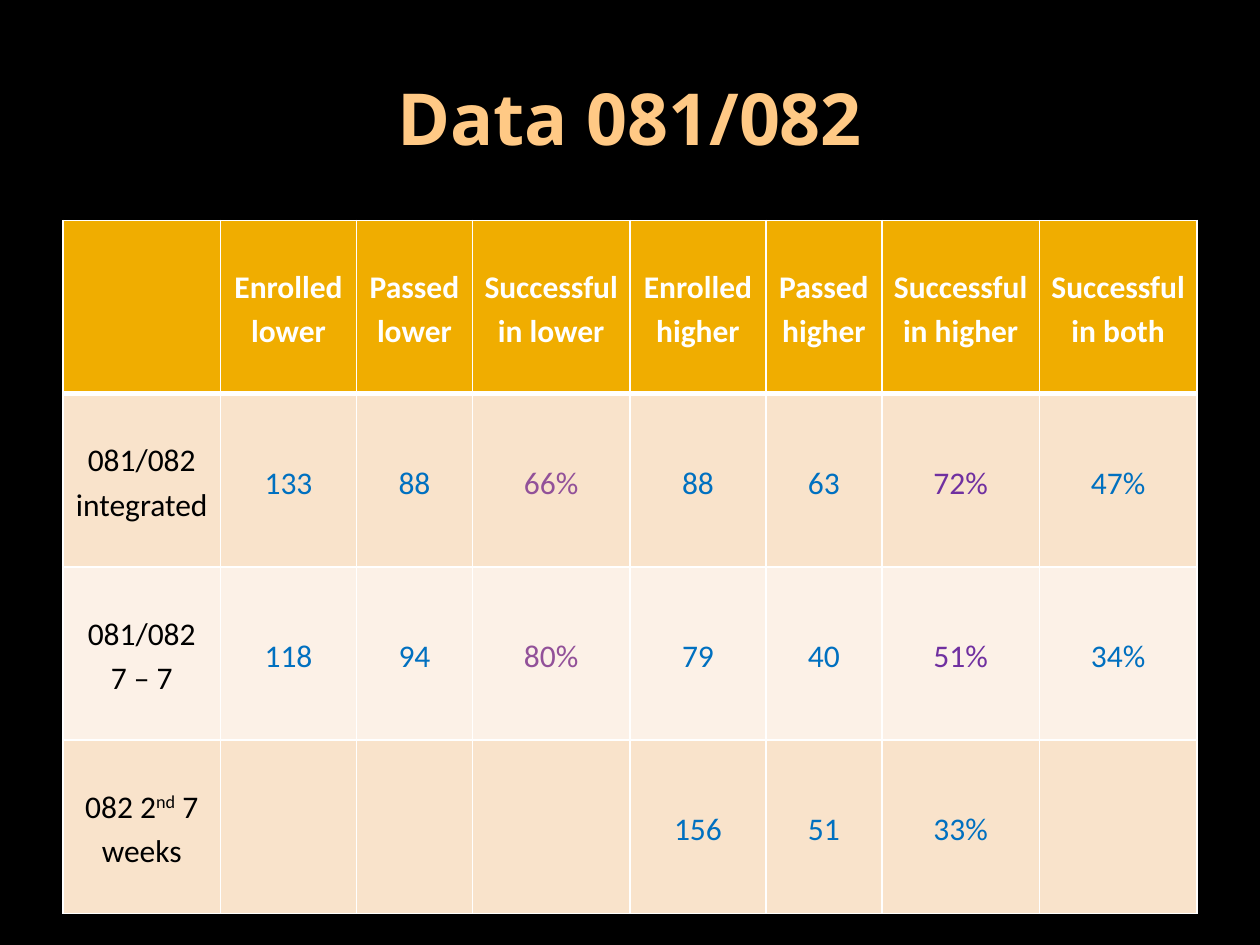
"""Build the Data 081/082 slide with its enrolment and success table."""
from lxml.etree import SubElement
from pptx import Presentation
from pptx.dml.color import RGBColor
from pptx.enum.text import MSO_ANCHOR, PP_ALIGN
from pptx.oxml.ns import qn
from pptx.util import Inches, Pt

TITLE = "Data 081/082"
HEADINGS = ["", "Enrolled lower", "Passed lower", "Successful in lower", "Enrolled higher",
            "Passed higher", "Successful in higher", "Successful in both"]
ROWS = [
    (["081/082 integrated"], ["133", "88", "66%", "88", "63", "72%", "47%"]),
    (["081/082", "\n", "7 – 7"], ["118", "94", "80%", "79", "40", "51%", "34%"]),
    (["082 2", "^nd", " 7 weeks"], ["", "", "", "156", "51", "33%", ""]),
]
COLUMN_WIDTHS = [1.25, 1.08, 0.92, 1.25, 1.08, 0.92, 1.25, 1.25]
ROW_HEIGHT = 1.375
COLORS = {
    "background": "000000", "title": "FFC985", "header": "F0AD00", "border": "FFFFFF",
    "odd": "F9E3CB", "even": "FCF1E7", "heading": "FFFFFF", "label": "000000",
    "value": "0070C0", "lower": "925199", "higher": "7030A0",
}
PERCENT_COLORS = {3: "lower", 6: "higher"}


def color(name):
    return RGBColor.from_string(COLORS[name])


def write(paragraph, pieces, font, size, tint, bold):
    paragraph.alignment = PP_ALIGN.CENTER
    for piece in pieces:
        if piece == "\n":
            paragraph.add_line_break()
            continue
        span = paragraph.add_run()
        span.text = piece.lstrip("^")
        span.font.name = font
        span.font.size = Pt(size)
        span.font.bold = bold
        span.font.color.rgb = color(tint)
        if piece.startswith("^"):
            span.font._element.set("baseline", "30000")


def add_borders(cell, top, bottom):
    properties = cell._tc.get_or_add_tcPr()
    for position, (side, width) in enumerate([("L", 1), ("R", 1), ("T", top), ("B", bottom)]):
        line = SubElement(properties, qn(f"a:ln{side}"), w=str(Pt(width)))
        fill = SubElement(line, qn("a:solidFill"))
        SubElement(fill, qn("a:srgbClr"), val=COLORS["border"])
        properties.remove(line)
        properties.insert(position, line)


def fill_cell(cell, pieces, row, column):
    cell.fill.solid()
    cell.fill.fore_color.rgb = color("header" if row == 0 else "odd" if row % 2 else "even")
    add_borders(cell, 3 if row == 1 else 1, 3 if row == 0 else 1)
    cell.vertical_anchor = MSO_ANCHOR.MIDDLE
    cell.margin_left = cell.margin_right = Inches(0.07)
    cell.margin_top = cell.margin_bottom = 0
    if pieces == [""]:
        return
    if row == 0:
        tint = "heading"
    elif column == 0:
        tint = "label"
    else:
        tint = PERCENT_COLORS.get(column, "value") if row < len(ROWS) else "value"
    paragraph = cell.text_frame.paragraphs[0]
    paragraph.line_spacing = 1.15
    write(paragraph, pieces, "Calibri", 18, tint, row == 0)


def add_title(page):
    box = page.shapes.add_textbox(Inches(0.5), Inches(0.3), Inches(9), Inches(1.25))
    frame = box.text_frame
    frame.word_wrap = True
    frame.vertical_anchor = MSO_ANCHOR.MIDDLE
    write(frame.paragraphs[0], [TITLE], "Open Sans", 41, "title", True)


def add_data_table(page):
    grid = [[[heading] for heading in HEADINGS]]
    grid += [[label] + [[value] for value in values] for label, values in ROWS]
    table = page.shapes.add_table(len(grid), len(HEADINGS), Inches(0.5), Inches(1.75),
                                  Inches(9), Inches(ROW_HEIGHT * len(grid))).table
    for column, width in zip(table.columns, COLUMN_WIDTHS):
        column.width = Inches(width)
    for row, cells in enumerate(grid):
        table.rows[row].height = Inches(ROW_HEIGHT)
        for column, pieces in enumerate(cells):
            fill_cell(table.cell(row, column), pieces, row, column)


def main():
    deck = Presentation()
    deck.slide_width, deck.slide_height = Inches(10), Inches(7.5)
    page = deck.slides.add_slide(deck.slide_layouts[6])
    page.background.fill.solid()
    page.background.fill.fore_color.rgb = color("background")
    add_title(page)
    add_data_table(page)
    deck.save("out.pptx")


if __name__ == "__main__":
    main()
